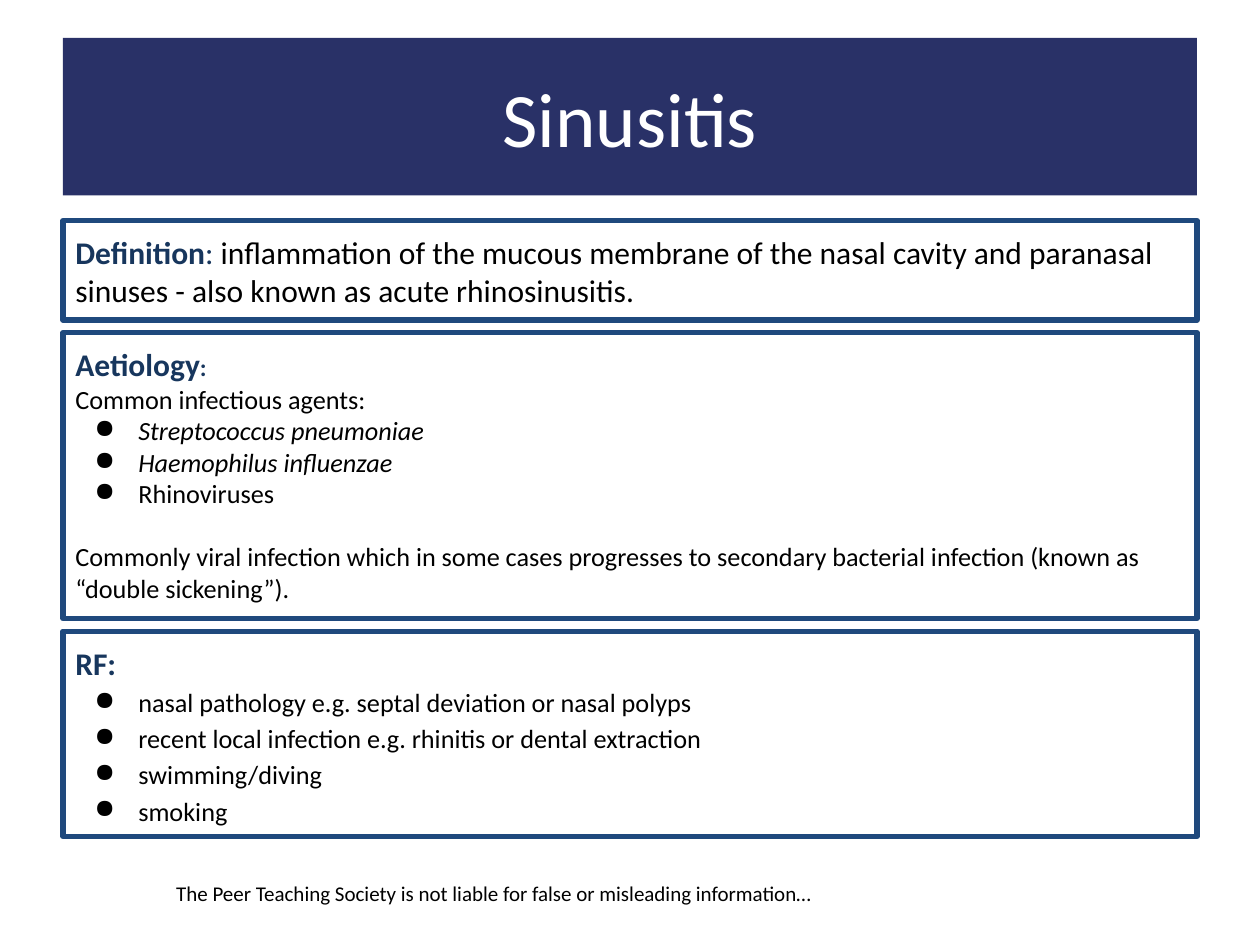
from dataclasses import dataclass

from lxml import etree
from pptx import Presentation
from pptx import util as u
from pptx.dml.color import RGBColor
from pptx.enum import shapes, text
from pptx.oxml.ns import qn

PX = 9144  # EMU in one px, at 100 px to the inch
LEFT, WIDTH = 50, 900


@dataclass(frozen=True)
class Theme:
    face: str = "Calibri"
    navy: str = "293167"
    edge: str = "1F497D"
    head: str = "17365D"
    ink: str = "000000"
    white: str = "FFFFFF"
    title: int = 44
    large: int = 18
    body: int = 15
    colon: int = 14
    note: int = 12


T = Theme()


def color(code):
    return RGBColor.from_string(code)


def style(run, size, code=T.ink, bold=False, italic=False):
    font = run.font
    font.name, font.size = T.face, u.Pt(size)
    font.bold, font.italic = bold, italic
    font.color.rgb = color(code)


def write(para, words, size, code=T.ink, bold=False, italic=False):
    run = para.add_run()
    run.text = words
    style(run, size, code, bold, italic)


def bullet(para):
    props = para._p.get_or_add_pPr()
    props.set("marL", str(50 * PX))
    props.set("indent", str(-35 * PX))
    tint = etree.SubElement(props, qn("a:buClr"))
    etree.SubElement(tint, qn("a:srgbClr"), val=T.ink)
    etree.SubElement(props, qn("a:buChar"), char="●")


def add_line(frame, words, dot=False, italic=False, lead=None, gap=0):
    para = frame.add_paragraph()
    if dot:
        bullet(para)
    if lead:
        para.line_spacing = lead
    if gap:
        para.space_before = u.Pt(gap)
    write(para, words, T.body, italic=italic)


def add_rect(slide, top, height):
    """Add a full-width rectangle with plain left-aligned text."""
    rect = slide.shapes.add_shape(
        shapes.MSO_SHAPE.RECTANGLE, LEFT * PX, top * PX, WIDTH * PX, height * PX)
    rect.shadow.inherit = False
    frame = rect.text_frame
    frame.word_wrap = True
    frame.vertical_anchor = text.MSO_ANCHOR.TOP
    frame.margin_left = frame.margin_right = 10 * PX
    frame.margin_top = frame.margin_bottom = 10 * PX
    frame.paragraphs[0].alignment = text.PP_ALIGN.LEFT
    return rect


def add_title(slide, words):
    rect = add_rect(slide, 30, 125)
    rect.fill.solid()
    rect.fill.fore_color.rgb = color(T.navy)
    rect.line.fill.background()
    frame = rect.text_frame
    frame.vertical_anchor = text.MSO_ANCHOR.MIDDLE
    para = frame.paragraphs[0]
    para.alignment = text.PP_ALIGN.CENTER
    write(para, words, T.title, T.white)


def add_panel(slide, top, height, head):
    """Add an outlined box that opens with a bold heading."""
    rect = add_rect(slide, top, height)
    rect.fill.background()
    rect.line.color.rgb = color(T.edge)
    rect.line.width = u.Pt(3)
    write(rect.text_frame.paragraphs[0], head, T.large, T.head, bold=True)
    return rect.text_frame


def add_note(slide, words):
    frame = slide.shapes.add_textbox(130 * PX, 694 * PX, 554 * PX, 30 * PX).text_frame
    frame.word_wrap = True
    para = frame.paragraphs[0]
    para.text = words
    style(para.runs[0], T.note)


def main():
    deck = Presentation()
    deck.slide_width, deck.slide_height = 1000 * PX, 750 * PX
    slide = deck.slides.add_slide(deck.slide_layouts[6])

    add_note(slide, "The Peer Teaching Society is not liable for false or "
                    "misleading information…")
    add_title(slide, "Sinusitis")

    para = add_panel(slide, 175, 79, "Definition").paragraphs[0]
    write(para, ":", T.large, T.head)
    write(para, " inflammation of the mucous membrane of the nasal cavity and "
                "paranasal sinuses - also known as acute rhinosinusitis.", T.large)

    cause = add_panel(slide, 264, 227, "Aetiology")
    write(cause.paragraphs[0], ":", T.colon, T.head, bold=True)
    add_line(cause, "Common infectious agents:")
    for agent, latin in (("Streptococcus pneumoniae", True),
                         ("Haemophilus influenzae", True),
                         ("Rhinoviruses", False)):
        add_line(cause, agent, dot=True, italic=latin)
    add_line(cause, "Commonly viral infection which in some cases progresses to "
                    "secondary bacterial infection (known as “double sickening”).",
             gap=18)

    risk = add_panel(slide, 501, 163, "RF:")
    for item in ("nasal pathology e.g. septal deviation or nasal polyps",
                 "recent local infection e.g. rhinitis or dental extraction",
                 "swimming/diving",
                 "smoking"):
        add_line(risk, item, dot=True, lead=1.15)

    deck.save("out.pptx")


if __name__ == "__main__":
    main()
